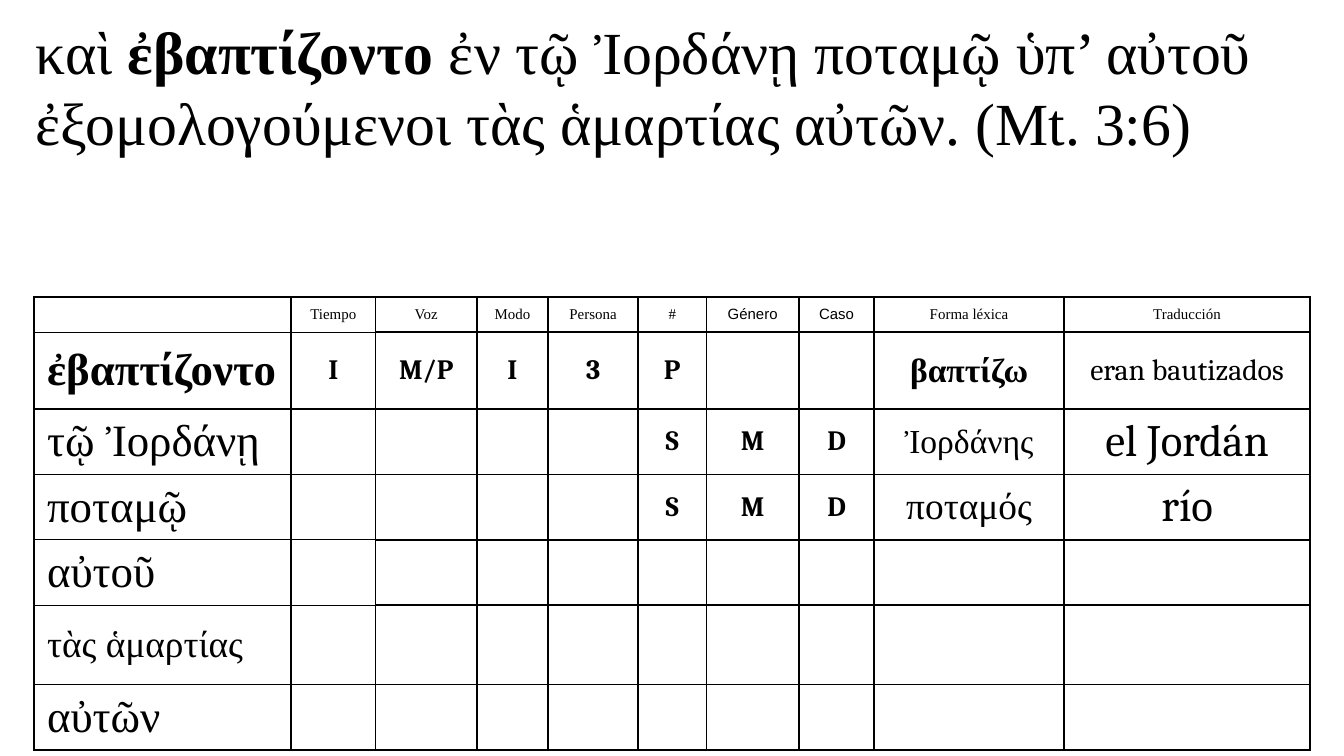
from lxml import etree
from pptx import Presentation
from pptx import util as u
from pptx.dml.color import RGBColor
from pptx.enum import text
from pptx.oxml import ns

COLORS = {"ink": "000000", "paper": "FFFFFF"}
SERIF, LATIN, SANS = "Times New Roman", "Cambria", "Arial"

COLUMN_WIDTHS = [4.86, 1.6, 1.91, 1.35, 1.7, 1.29, 1.75, 1.42, 3.59, 4.65]
ROW_HEIGHTS = [0.67, 1.45, 1.09, 1.09, 1.09, 1.5, 1.09]
HEADERS = ["", "Tiempo", "Voz", "Modo", "Persona", "#", "Género", "Caso",
           "Forma léxica", "Traducción"]
PARSING = [
    ["ἐβαπτίζοντο", "I", "M/P", "I", "3", "P", "", "", "βαπτίζω", "eran bautizados"],
    ["τῷ Ἰορδάνῃ", "", "", "", "", "S", "M", "D", "Ἰορδάνης", "el Jordán"],
    ["ποταμῷ", "", "", "", "", "S", "M", "D", "ποταμός", "río"],
    ["αὐτοῦ"],
    ["τὰς ἁμαρτίας"],
    ["αὐτῶν"],
]
WORD_SIZES = [24, 24, 24, 24, 20, 24]
LEXICAL_SIZES = [18, 18, 20]
TRANSLATION_SIZES = [16, 24, 24]
LEXICAL, TRANSLATION = 8, 9


def add_text(paragraph, words, size=15, font=SERIF, bold=False, align=None):
    """Add one formatted run; empty words only fix the line's height."""
    paragraph.alignment = align
    if not words:
        end = etree.SubElement(paragraph._p, ns.qn("a:endParaRPr"))
        end.set("sz", str(size * 100))
        return
    run = paragraph.add_run()
    run.text = words
    run.font.size = u.Pt(size)
    run.font.name = font
    run.font.bold = bold
    run.font.color.rgb = RGBColor.from_string(COLORS["ink"])


def set_borders(cell, widths):
    """Draw the left, right, top and bottom lines, in points."""
    properties = cell._tc.get_or_add_tcPr()
    for side, width in zip("LRTB", widths):
        line = etree.SubElement(properties, ns.qn(f"a:ln{side}"), w=str(u.Pt(width)))
        fill = etree.SubElement(line, ns.qn("a:solidFill"))
        etree.SubElement(fill, ns.qn("a:srgbClr"), val=COLORS["ink"])


def cell_format(row, column):
    """Give the text format that belongs to a place in the table."""
    if row == 0:
        font = SANS if HEADERS[column] in ("Género", "Caso") else SERIF
        return dict(size=8, font=font, align=text.PP_ALIGN.CENTER)
    entry = row - 1
    if column == 0:
        return dict(size=WORD_SIZES[entry], bold=entry == 0)
    centred = dict(align=text.PP_ALIGN.CENTER)
    if entry < len(LEXICAL_SIZES) and column == LEXICAL:
        return dict(size=LEXICAL_SIZES[entry], bold=entry == 0, **centred)
    if entry < len(TRANSLATION_SIZES) and column == TRANSLATION:
        return dict(size=TRANSLATION_SIZES[entry], font=LATIN, **centred)
    return dict(font=LATIN, bold=True, **centred)


def add_verse(slide):
    box = slide.shapes.add_textbox(u.Cm(0.43), u.Cm(0.13), u.Cm(24.56), u.Cm(3))
    frame = box.text_frame
    frame.word_wrap = True
    frame.vertical_anchor = text.MSO_ANCHOR.MIDDLE
    paragraph = frame.paragraphs[0]
    add_text(paragraph, "καὶ ", size=32)
    add_text(paragraph, "ἐβαπτίζοντο", size=32, bold=True)
    add_text(paragraph, " ἐν τῷ Ἰορδάνῃ ποταμῷ ὑπ’ αὐτοῦ ἐξομολογούμενοι "
             "τὰς ἁμαρτίας αὐτῶν. (Mt. 3:6)", size=32)


def add_parsing_table(slide):
    rows, columns = len(ROW_HEIGHTS), len(COLUMN_WIDTHS)
    table = slide.shapes.add_table(
        rows, columns, u.Cm(0.64), u.Cm(5.61),
        u.Cm(sum(COLUMN_WIDTHS)), u.Cm(sum(ROW_HEIGHTS))).table
    table.first_row = table.horz_banding = False
    for column, width in zip(table.columns, COLUMN_WIDTHS):
        column.width = u.Cm(width)

    for i, entries in enumerate([HEADERS] + PARSING):
        table.rows[i].height = u.Cm(ROW_HEIGHTS[i])
        for j in range(columns):
            cell = table.cell(i, j)
            cell.vertical_anchor = text.MSO_ANCHOR.MIDDLE
            cell.margin_left = cell.margin_right = u.Cm(0.25)
            cell.margin_top = cell.margin_bottom = u.Cm(0.11)
            words = entries[j] if j < len(entries) else ""
            add_text(cell.text_frame.paragraphs[0], words, **cell_format(i, j))
            # The first two columns have thinner lines between rows
            inner = 0.75 if j < 2 else 1
            set_borders(cell, (1, 1, inner if i else 1, inner))
            cell.fill.solid()
            cell.fill.fore_color.rgb = RGBColor.from_string(COLORS["paper"])


def main():
    presentation = Presentation()
    presentation.slide_width = u.Cm(25.4)
    presentation.slide_height = u.Cm(14.29)
    slide = presentation.slides.add_slide(presentation.slide_layouts[6])
    add_verse(slide)
    add_parsing_table(slide)
    presentation.save("out.pptx")


if __name__ == "__main__":
    main()
